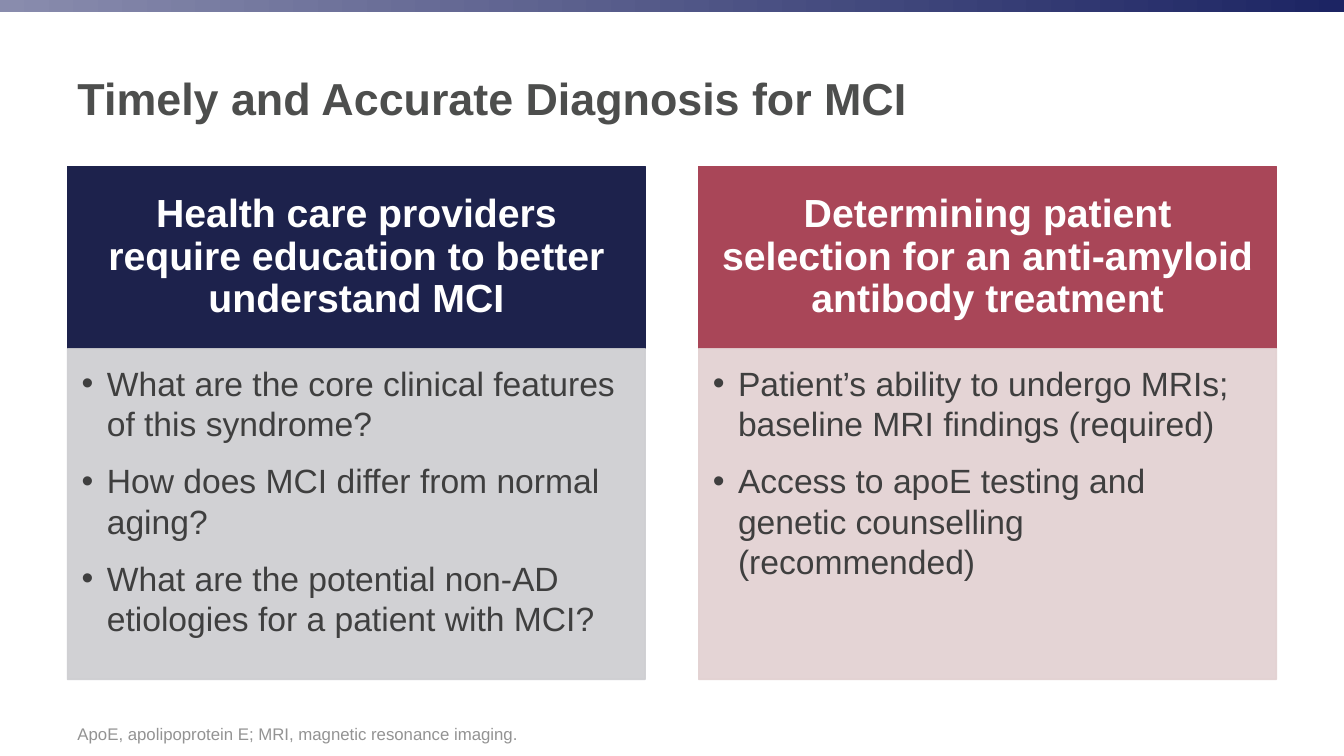
"""Build the slide on timely and accurate diagnosis for MCI."""
from dataclasses import dataclass

import pptx
import pptx.dml.color
import pptx.enum.shapes
import pptx.enum.text
import pptx.oxml
import pptx.oxml.ns
import pptx.util
from pptx.util import Inches

ALIGN = pptx.enum.text.PP_ALIGN
ANCHOR = pptx.enum.text.MSO_ANCHOR


@dataclass(frozen=True)
class Theme:
    font: str = "Arial"
    title: str = "4D4E4D"
    body: str = "3F3F3F"
    note: str = "939393"
    white: str = "FFFFFF"
    bar: tuple = ("898CAD", "1C2463")
    navy: str = "1D224C"
    grey: str = "CDCDD0"
    red: str = "A94658"
    pink: str = "E2D0D1"
    title_size: int = 32
    header_size: int = 28
    body_size: int = 24
    note_size: int = 12
    panel_opacity: int = 90


THEME = Theme()
SLIDE_WIDTH, SLIDE_HEIGHT = 13.33, 7.5
LEFT, TOP = 0.67, 1.65
COLUMN_WIDTH, COLUMN_STEP = 5.73, 6.26
HEADER_HEIGHT, PANEL_HEIGHT = 1.81, 3.28

COLUMNS = [
    {
        "header": "Health care providers require education to better understand MCI",
        "bullets": [
            "What are the core clinical features of this syndrome?",
            "How does MCI differ from normal aging?",
            "What are the potential non-AD etiologies for a patient with MCI?",
        ],
        "dark": THEME.navy,
        "light": THEME.grey,
    },
    {
        "header": "Determining patient selection for an anti-amyloid antibody treatment",
        "bullets": [
            "Patient’s ability to undergo MRIs; baseline MRI findings (required)",
            "Access to apoE testing and genetic counselling (recommended)",
        ],
        "dark": THEME.red,
        "light": THEME.pink,
    },
]


def rgb(value):
    """Turn a hex string into a colour."""
    return pptx.dml.color.RGBColor.from_string(value)


def apply(target, **values):
    """Set each given attribute on the target."""
    for name, value in values.items():
        setattr(target, name, value)


def set_frame(shape, anchor, insets):
    """Set wrapping, anchor and left, top, right, bottom insets."""
    left, top, right, bottom = (Inches(inset) for inset in insets)
    apply(shape.text_frame, word_wrap=True, vertical_anchor=anchor,
          margin_left=left, margin_top=top, margin_right=right, margin_bottom=bottom)


def write(para, text, size, color, bold=False):
    """Add one styled span to a paragraph."""
    span = para.add_run()
    span.text = text
    apply(span.font, name=THEME.font, size=pptx.util.Pt(size), bold=bold)
    span.font.color.rgb = rgb(color)


def add_bullet(para):
    """Give a paragraph a hanging round bullet."""
    properties = para._p.get_or_add_pPr()
    properties.set("marL", str(Inches(0.25)))
    properties.set("indent", str(Inches(-0.25)))
    namespace = pptx.oxml.ns.nsdecls("a")
    properties.append(pptx.oxml.parse_xml(f'<a:buFont {namespace} typeface="Arial"/>'))
    properties.append(pptx.oxml.parse_xml(f'<a:buChar {namespace} char="•"/>'))


def add_rectangle(page, left, top, width, height):
    """Add a rectangle without a shadow."""
    shape = page.shapes.add_shape(
        pptx.enum.shapes.MSO_SHAPE.RECTANGLE,
        Inches(left), Inches(top), Inches(width), Inches(height))
    shape.shadow.inherit = False
    return shape


def paint(shape, color, opacity=100):
    """Fill and outline a shape in one colour."""
    shape.fill.solid()
    shape.fill.fore_color.rgb = rgb(color)
    shape.line.color.rgb = rgb(color)
    shape.line.width = pptx.util.Pt(1)
    if opacity < 100:
        for node in shape._element.spPr.iter(pptx.oxml.ns.qn("a:srgbClr")):
            node.append(pptx.oxml.parse_xml(
                f'<a:alpha {pptx.oxml.ns.nsdecls("a")} val="{opacity * 1000}"/>'))


def add_top_bar(page):
    """Add the gradient bar along the top edge."""
    bar = add_rectangle(page, 0, 0, SLIDE_WIDTH, 0.12)
    bar.fill.gradient()
    bar.fill.gradient_angle = 0
    for stop, position, color in zip(bar.fill.gradient_stops, (0, 1), THEME.bar):
        stop.position = position
        stop.color.rgb = rgb(color)
    bar.line.fill.background()


def add_text(page, top, height, anchor, text, size, color, bold=False):
    """Add a full-width text box."""
    box = page.shapes.add_textbox(Inches(LEFT), Inches(top), Inches(11.75), Inches(height))
    set_frame(box, anchor, (0.1, 0.05, 0.1, 0.05))
    write(box.text_frame.paragraphs[0], text, size, color, bold)


def add_header(page, left, text, color):
    """Add the heading block of a column."""
    header = add_rectangle(page, left, TOP, COLUMN_WIDTH, HEADER_HEIGHT)
    paint(header, color)
    set_frame(header, ANCHOR.MIDDLE, (0.2, 0.12, 0.2, 0.12))
    para = header.text_frame.paragraphs[0]
    apply(para, alignment=ALIGN.CENTER, line_spacing=0.9)
    write(para, text, THEME.header_size, THEME.white, bold=True)


def add_panel(page, left, bullets, color):
    """Add the bulleted panel of a column."""
    panel = add_rectangle(page, left, TOP + HEADER_HEIGHT, COLUMN_WIDTH, PANEL_HEIGHT)
    paint(panel, color, THEME.panel_opacity)
    set_frame(panel, ANCHOR.TOP, (0.14, 0.14, 0.19, 0.21))
    frame = panel.text_frame
    for index, text in enumerate(bullets):
        para = frame.add_paragraph() if index else frame.paragraphs[0]
        add_bullet(para)
        apply(para, level=1, alignment=ALIGN.LEFT, space_after=pptx.util.Pt(12))
        write(para, text, THEME.body_size, THEME.body)


def main():
    """Build and save the deck."""
    deck = pptx.Presentation()
    apply(deck, slide_width=Inches(SLIDE_WIDTH), slide_height=Inches(SLIDE_HEIGHT))
    page = deck.slides.add_slide(deck.slide_layouts[6])
    add_top_bar(page)
    add_text(page, 0.32, 1.3, ANCHOR.MIDDLE, "Timely and Accurate Diagnosis for MCI",
             THEME.title_size, THEME.title, bold=True)
    add_text(page, 6.95, 0.48, ANCHOR.BOTTOM,
             "ApoE, apolipoprotein E; MRI, magnetic resonance imaging.",
             THEME.note_size, THEME.note)
    for index, column in enumerate(COLUMNS):
        left = LEFT + index * COLUMN_STEP
        add_header(page, left, column["header"], column["dark"])
        add_panel(page, left, column["bullets"], column["light"])
    deck.save("out.pptx")


if __name__ == "__main__":
    main()
